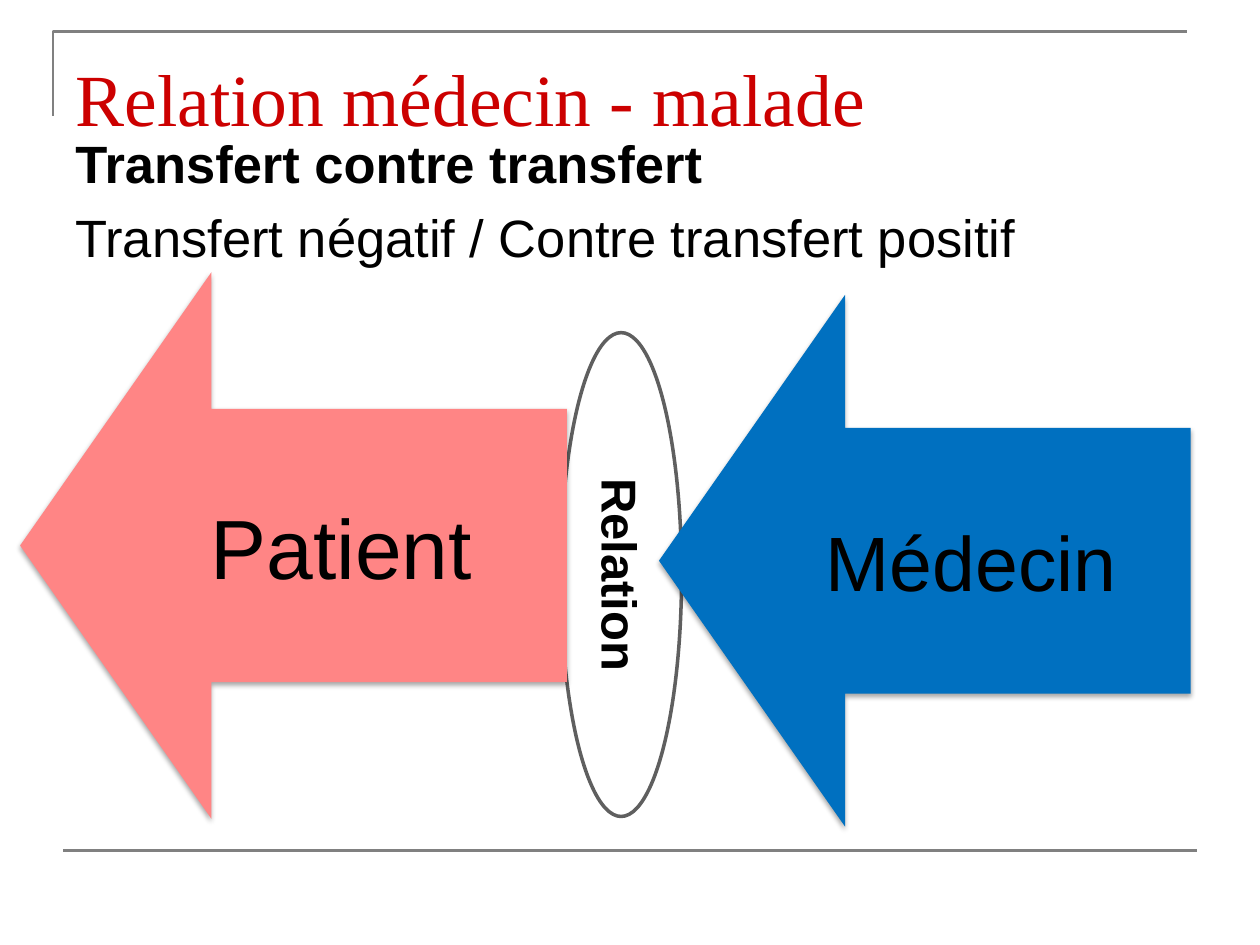
from lxml import etree
from pptx import Presentation
from pptx.dml.color import RGBColor
from pptx.enum.shapes import MSO_CONNECTOR, MSO_SHAPE
from pptx.enum.text import MSO_ANCHOR, PP_ALIGN
from pptx.oxml import parse_xml
from pptx.oxml.ns import nsdecls, qn
from pptx.util import Inches, Pt

LEFT, CENTER = PP_ALIGN.LEFT, PP_ALIGN.CENTER
TOP, MIDDLE = MSO_ANCHOR.TOP, MSO_ANCHOR.MIDDLE
ELLIPSE, LEFT_ARROW = MSO_SHAPE.OVAL, MSO_SHAPE.LEFT_ARROW
STRAIGHT = MSO_CONNECTOR.STRAIGHT

COLORS = {
    "title": "CC0000",
    "text": "000000",
    "frame": "808080",
    "outline": "5F5F5F",
    "patient": "FF8585",
    "doctor": "0070C0",
}


def color(name):
    return RGBColor.from_string(COLORS[name])


def set_line(shape, name, width):
    shape.line.color.rgb = color(name)
    shape.line.width = Pt(width)


def format_frame(frame, anchor, **margins):
    frame.word_wrap = True
    frame.vertical_anchor = anchor
    for side, value in margins.items():
        setattr(frame, f"margin_{side}", Inches(value))


def write(paragraph, text, size, align=LEFT, name="Arial", bold=False, ink="text"):
    paragraph.text = text
    paragraph.alignment = align
    values = {"size": Pt(size), "name": name, "bold": bold}
    for key, value in values.items():
        setattr(paragraph.font, key, value)
    paragraph.font.color.rgb = color(ink)


def add_frame_lines(slide):
    builder = slide.shapes.build_freeform(Inches(0.42), Inches(0.92))
    corner = [(Inches(0.42), Inches(0.25)), (Inches(9.42), Inches(0.25))]
    builder.add_line_segments(corner, close=False)
    bracket = builder.convert_to_shape()
    bracket.shadow.inherit = False
    bracket.fill.background()
    set_line(bracket, "frame", 1.5)

    rule = slide.shapes.add_connector(
        STRAIGHT, Inches(0.5), Inches(6.75), Inches(9.5), Inches(6.75))
    etree.SubElement(rule._element.spPr, qn("a:effectLst"))
    set_line(rule, "frame", 1.5)


def set_title(slide, text):
    title = slide.shapes.title
    title.left, title.top = Inches(0.5), Inches(0.3)
    title.width, title.height = Inches(9), Inches(1.25)
    format_frame(title.text_frame, TOP, top=0.12)
    write(title.text_frame.paragraphs[0], text, 42, name="Times New Roman", ink="title")


def add_body(slide, heading, detail):
    box = slide.shapes.add_textbox(Inches(0.5), Inches(0.94), Inches(9), Inches(1.88))
    frame = box.text_frame
    format_frame(frame, TOP, top=0.1)
    write(frame.paragraphs[0], heading, 30, bold=True)
    paragraph = frame.add_paragraph()
    write(paragraph, detail, 30)
    paragraph.space_before = Pt(6)


def add_relation(slide, text):
    ellipse = slide.shapes.add_shape(
        ELLIPSE, Inches(4.45), Inches(2.64), Inches(0.96), Inches(3.84))
    ellipse.shadow.inherit = False
    ellipse.fill.background()
    set_line(ellipse, "outline", 2)
    format_frame(ellipse.text_frame, MIDDLE)
    ellipse.text_frame._txBody.bodyPr.set("vert", "vert")
    write(ellipse.text_frame.paragraphs[0], text, 28, CENTER, bold=True)


def add_soft_shadow(shape):
    shape.shadow.inherit = False
    effects = shape._element.spPr.find(qn("a:effectLst"))
    effects.append(parse_xml(
        f'<a:outerShdw {nsdecls("a")} blurRad="{Pt(3.1)}" dist="{Pt(1.8)}" '
        'dir="5400000" rotWithShape="0"><a:srgbClr val="000000">'
        '<a:alpha val="35000"/></a:srgbClr></a:outerShdw>'))


def add_arrow(slide, text, left, top, side, fill, size, margin):
    arrow = slide.shapes.add_shape(
        LEFT_ARROW, Inches(left), Inches(top), Inches(side), Inches(side))
    arrow.adjustments[0] = 0.5
    arrow.adjustments[1] = 0.35
    arrow.fill.solid()
    arrow.fill.fore_color.rgb = color(fill)
    arrow.line.fill.background()
    add_soft_shadow(arrow)
    format_frame(arrow.text_frame, MIDDLE,
                 left=margin, right=margin, top=margin, bottom=margin)
    write(arrow.text_frame.paragraphs[0], text, size, CENTER)


def main():
    presentation = Presentation()
    presentation.slide_width = Inches(10)
    presentation.slide_height = Inches(7.5)
    slide = presentation.slides.add_slide(presentation.slide_layouts[5])

    add_frame_lines(slide)
    set_title(slide, "Relation médecin - malade")
    add_body(slide, "Transfert contre transfert",
             "Transfert négatif / Contre transfert positif")
    add_relation(slide, "Relation")
    add_arrow(slide, "Médecin", 5.23, 2.34, 4.22, "doctor", 44, 0.29)
    add_arrow(slide, "Patient", 0.16, 2.16, 4.34, "patient", 48, 0.33)

    presentation.save("out.pptx")


if __name__ == "__main__":
    main()
